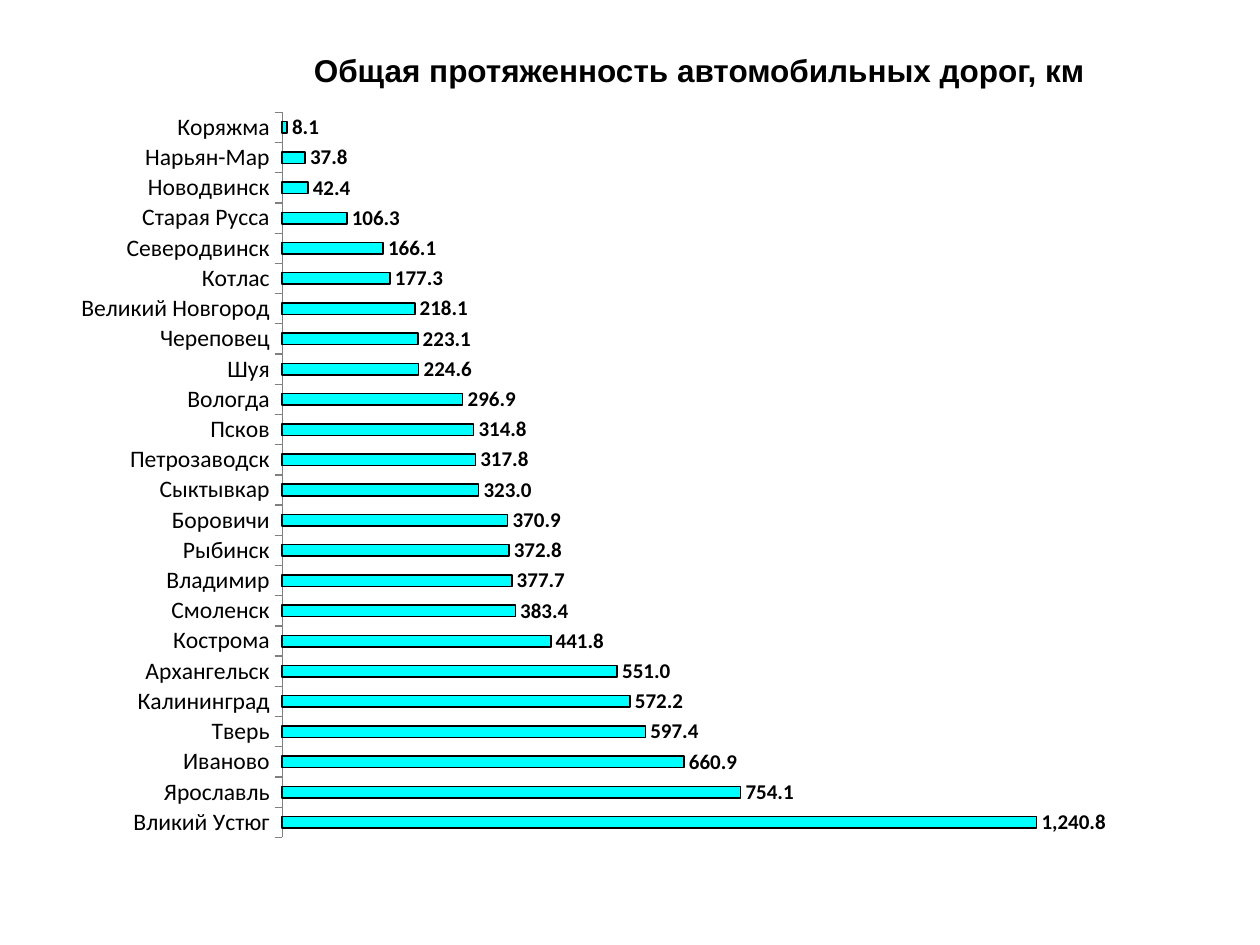
from dataclasses import dataclass

from lxml.etree import SubElement
from pptx import Presentation
from pptx.chart.data import CategoryChartData
from pptx.dml.color import RGBColor
from pptx.enum.chart import XL_CHART_TYPE, XL_LABEL_POSITION, XL_TICK_MARK
from pptx.enum.text import MSO_AUTO_SIZE, PP_ALIGN
from pptx.oxml.ns import qn
from pptx.util import Inches, Pt


@dataclass(frozen=True)
class Theme:
    text: RGBColor = RGBColor(0x00, 0x00, 0x00)
    bar: RGBColor = RGBColor(0x00, 0xFF, 0xFF)
    axis: RGBColor = RGBColor(0x80, 0x80, 0x80)
    title_font: str = "Arial"
    chart_font: str = "Calibri"
    title_size: Pt = Pt(18)
    axis_size: Pt = Pt(13.5)
    label_size: Pt = Pt(12)


THEME = Theme()
NUMBER_FORMAT = "#,##0.0"

# Road length by city in km, listed from the bottom bar up
ROAD_LENGTHS = {
    "Вликий Устюг": 1240.8,
    "Ярославль": 754.1,
    "Иваново": 660.9,
    "Тверь": 597.4,
    "Калининград": 572.2,
    "Архангельск": 551.0,
    "Кострома": 441.8,
    "Смоленск": 383.4,
    "Владимир": 377.7,
    "Рыбинск": 372.8,
    "Боровичи": 370.9,
    "Сыктывкар": 323.0,
    "Петрозаводск": 317.8,
    "Псков": 314.8,
    "Вологда": 296.9,
    "Шуя": 224.6,
    "Череповец": 223.1,
    "Великий Новгород": 218.1,
    "Котлас": 177.3,
    "Северодвинск": 166.1,
    "Старая Русса": 106.3,
    "Новодвинск": 42.4,
    "Нарьян-Мар": 37.8,
    "Коряжма": 8.1,
}


def style_font(font, name, size, bold=False):
    font.name = name
    font.size = size
    font.bold = bold
    font.color.rgb = THEME.text


def set_plot_layout(chart, left, top, width, height):
    """Fix the inner plot area, in fractions of the chart's size."""
    plot_area = chart.element.find(".//" + qn("c:plotArea"))
    for old_layout in plot_area.findall(qn("c:layout")):
        plot_area.remove(old_layout)
    layout = SubElement(plot_area, qn("c:layout"))
    plot_area.insert(0, layout)
    manual = SubElement(layout, qn("c:manualLayout"))
    settings = {
        "layoutTarget": "inner", "xMode": "edge", "yMode": "edge",
        "x": left, "y": top, "w": width, "h": height,
    }
    for tag, value in settings.items():
        SubElement(manual, qn(f"c:{tag}")).set("val", str(value))


def add_road_chart(slide, left, top, width, height):
    chart_data = CategoryChartData(number_format=NUMBER_FORMAT)
    chart_data.categories = list(ROAD_LENGTHS)
    chart_data.add_series("Series 1", list(ROAD_LENGTHS.values()))
    chart = slide.shapes.add_chart(
        XL_CHART_TYPE.BAR_CLUSTERED, left, top, width, height, chart_data
    ).chart
    chart.has_legend = False
    chart.has_title = False
    style_font(chart.font, THEME.chart_font, THEME.axis_size)
    set_plot_layout(chart, 0.214, 0.008, 0.709, 0.891)

    # Axes
    category_axis = chart.category_axis
    category_axis.major_tick_mark = XL_TICK_MARK.OUTSIDE
    category_axis.has_major_gridlines = False
    category_axis.format.line.color.rgb = THEME.axis
    style_font(category_axis.tick_labels.font, THEME.chart_font, THEME.axis_size)
    value_axis = chart.value_axis
    value_axis.minimum_scale = 0
    value_axis.maximum_scale = 1400
    value_axis.has_major_gridlines = False
    value_axis.visible = False

    # Bars
    plot = chart.plots[0]
    plot.gap_width = 162
    plot.overlap = -68
    plot.vary_by_categories = False
    series = plot.series[0]
    series.format.fill.solid()
    series.format.fill.fore_color.rgb = THEME.bar
    series.format.line.color.rgb = THEME.text
    series.format.line.width = Pt(0.84)

    # Value labels
    labels = series.data_labels
    labels.show_value = True
    labels.number_format = NUMBER_FORMAT
    labels.number_format_is_linked = False
    labels.position = XL_LABEL_POSITION.OUTSIDE_END
    style_font(labels.font, THEME.chart_font, THEME.label_size, bold=True)


def add_title(slide, left, top, width, height):
    text_frame = slide.shapes.add_textbox(left, top, width, height).text_frame
    text_frame.word_wrap = True
    text_frame.auto_size = MSO_AUTO_SIZE.SHAPE_TO_FIT_TEXT
    paragraph = text_frame.paragraphs[0]
    paragraph.text = "Общая протяженность автомобильных дорог, км"
    paragraph.alignment = PP_ALIGN.CENTER
    style_font(paragraph.font, THEME.title_font, THEME.title_size, bold=True)


def main():
    presentation = Presentation()
    presentation.slide_width = Inches(10)
    presentation.slide_height = Inches(7.5)
    slide = presentation.slides.add_slide(presentation.slide_layouts[6])
    add_road_chart(slide, Inches(0.2), Inches(0.84), Inches(9.53), Inches(6.46))
    add_title(slide, Inches(1.85), Inches(0.36), Inches(7.4), Inches(0.4))
    presentation.save("out.pptx")


if __name__ == "__main__":
    main()
